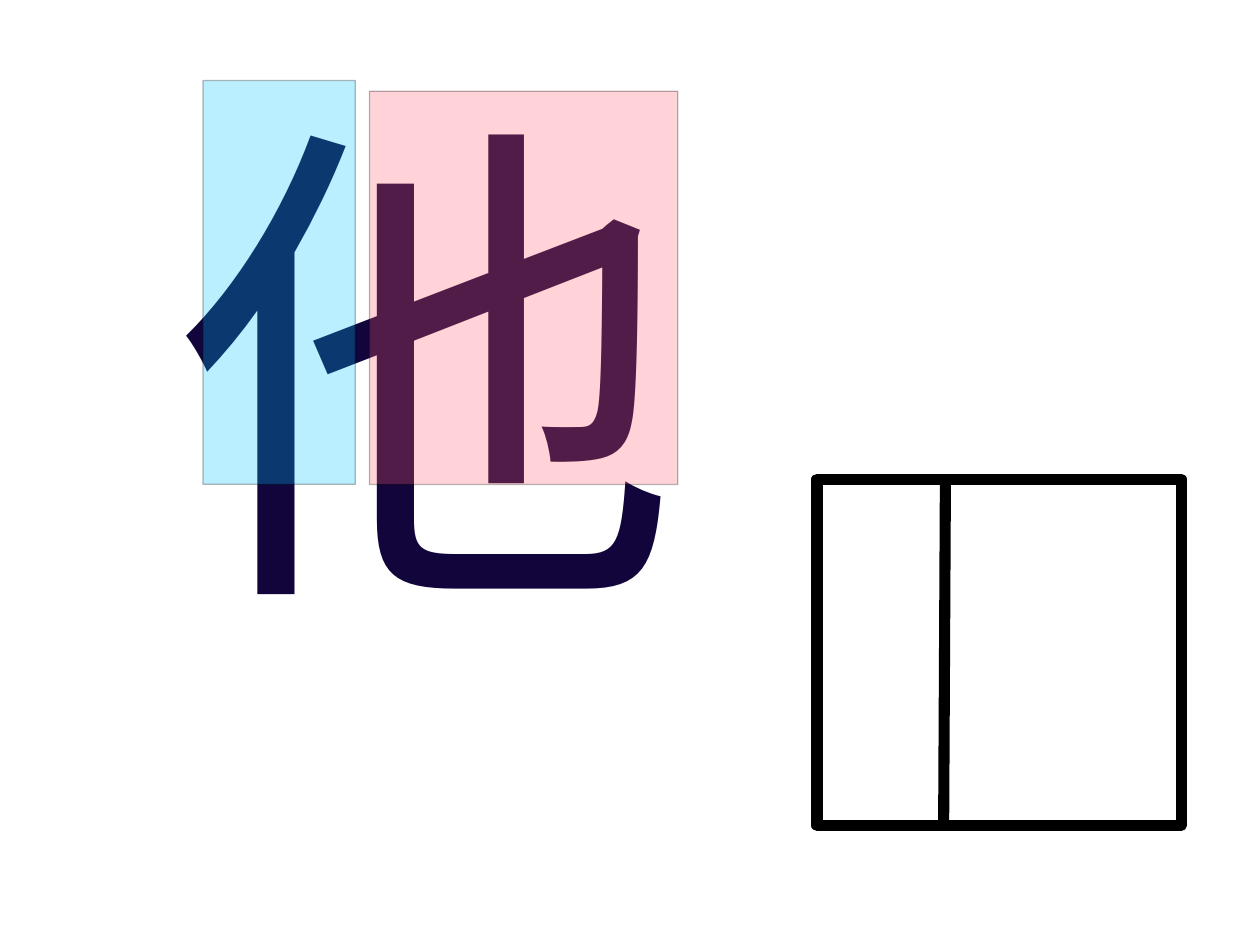
"""Build a slide splitting the character 他 into its left and right parts."""
from dataclasses import dataclass

from lxml import etree
from pptx import Presentation
from pptx import util as u
from pptx.dml.color import RGBColor
from pptx.enum import shapes, text
from pptx.oxml.ns import qn

COLOURS = {"ink": "11053B", "radical": "00C5FF", "component": "FF606D", "outline": "000000"}
FRAME_FORMAT = {
    "word_wrap": True,
    "auto_size": text.MSO_AUTO_SIZE.SHAPE_TO_FIT_TEXT,
    "vertical_anchor": text.MSO_ANCHOR.TOP,
    "margin_left": u.Inches(0.08),
    "margin_right": u.Inches(0.08),
    "margin_top": u.Inches(0.08),
    "margin_bottom": u.Inches(0.08),
}
GLYPH_FORMAT = {"name": "Arial", "size": u.Pt(408)}


@dataclass(frozen=True)
class Region:
    """A rectangle, tinted when it has a fill colour."""
    left: float
    top: float
    width: float
    height: float
    weight: float
    fill: str | None = None
    opacity: int = 100


REGIONS = (
    Region(2.29, 0.91, 1.72, 4.56, 1, "radical", 27),
    Region(4.17, 1.03, 3.48, 4.44, 1, "component", 27),
    Region(9.22, 5.41, 4.11, 3.91, 9),
)


def apply_format(target: object, values: dict) -> None:
    """Set each named attribute on the target."""
    for name, value in values.items():
        setattr(target, name, value)


def rgb(name: str) -> RGBColor:
    """Look up a named colour."""
    return RGBColor.from_string(COLOURS[name])


def draw_line_style(line, weight: float) -> None:
    """Give a line the outline colour and a weight in points."""
    line.color.rgb = rgb("outline")
    line.width = u.Pt(weight)


def draw_region(slide, region: Region) -> None:
    """Draw one rectangle with its tint and outline."""
    area = slide.shapes.add_shape(
        shapes.MSO_SHAPE.RECTANGLE,
        *map(u.Inches, (region.left, region.top, region.width, region.height)))
    area.shadow.inherit = False
    draw_line_style(area.line, region.weight)
    if region.fill:
        area.fill.solid()
        area.fill.fore_color.rgb = rgb(region.fill)
    else:
        area.fill.background()
    if region.opacity < 100:
        for colour in area.element.spPr.iter(qn("a:srgbClr")):
            etree.SubElement(colour, qn("a:alpha"), val=str(region.opacity * 1000))


def draw_character(slide) -> None:
    """Write the large character."""
    frame = slide.shapes.add_textbox(*map(u.Inches, (1.86, 0.53, 6.12, 11.54))).text_frame
    apply_format(frame, FRAME_FORMAT)
    paragraph = frame.paragraphs[0]
    paragraph._p.get_or_add_pPr().set("marL", str(u.Inches(0.06)))
    character = paragraph.add_run()
    character.text = "他"
    apply_format(character.font, GLYPH_FORMAT)
    character.font.color.rgb = rgb("ink")


def draw_divider(slide) -> None:
    """Draw the line that splits the layout square."""
    divider = slide.shapes.add_connector(
        shapes.MSO_CONNECTOR.STRAIGHT, *map(u.Inches, (10.67, 5.43, 10.65, 9.26)))
    draw_line_style(divider.line, 9)
    etree.SubElement(divider.element.spPr, qn("a:effectLst"))


def main() -> None:
    """Build and save the slide."""
    deck = Presentation()
    apply_format(deck, {"slide_width": u.Inches(14.22), "slide_height": u.Inches(10.67)})
    slide = deck.slides.add_slide(deck.slide_layouts[6])
    draw_character(slide)
    for region in REGIONS:
        draw_region(slide, region)
    draw_divider(slide)
    deck.save("out.pptx")


if __name__ == "__main__":
    main()
